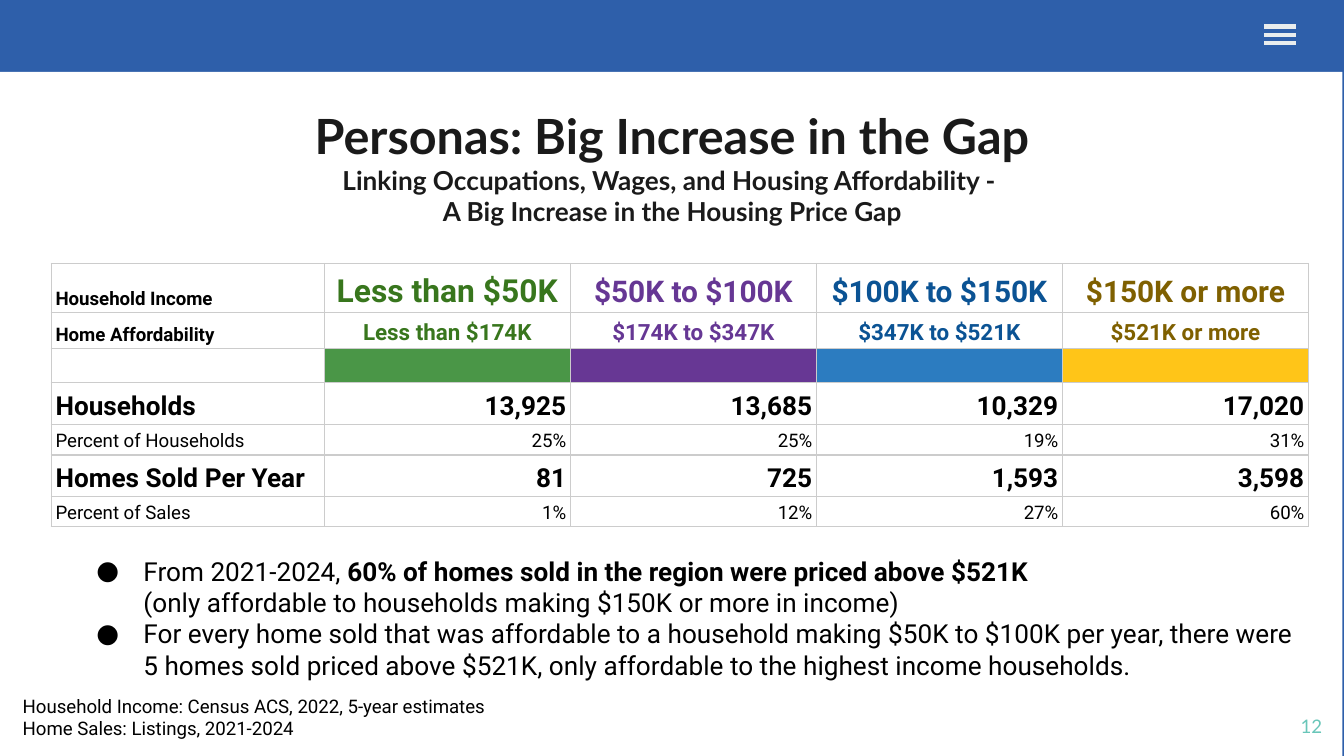
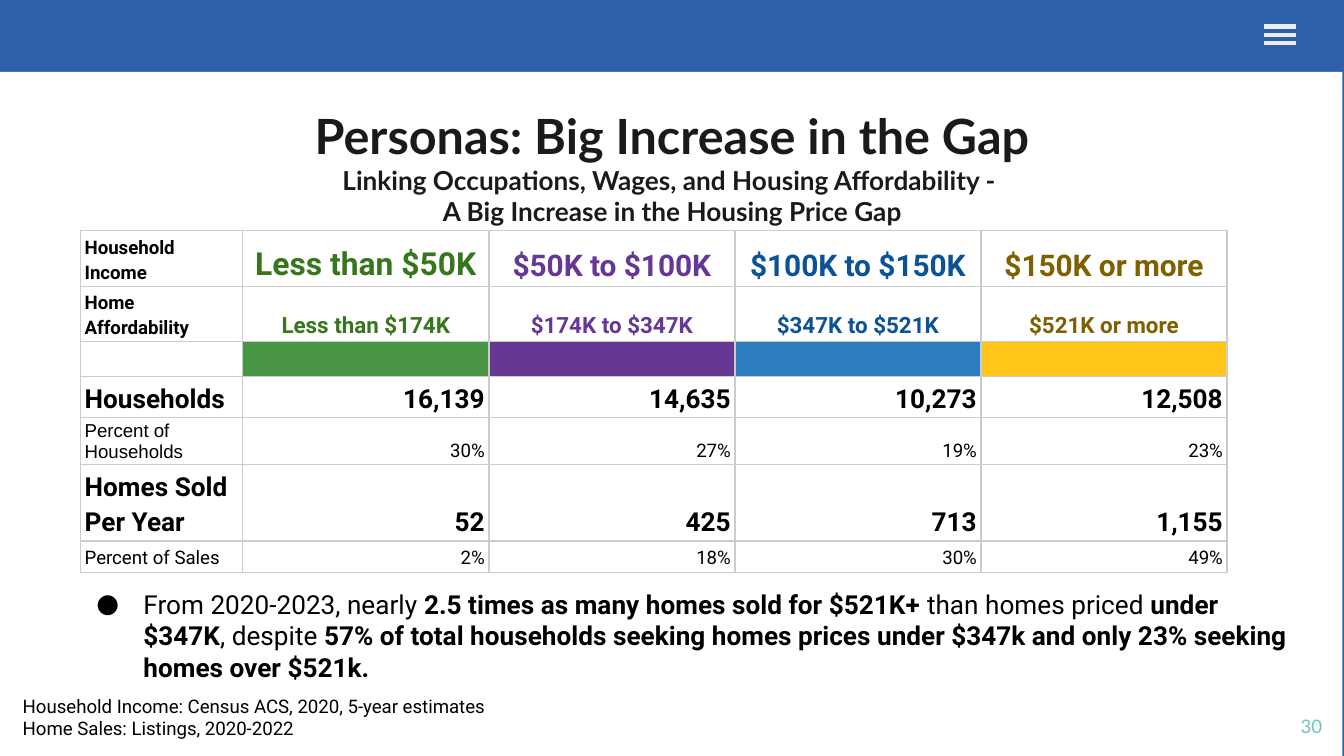
from lxml import etree
from pptx import Presentation
from pptx.dml.color import RGBColor
from pptx.enum.shapes import MSO_CONNECTOR, MSO_SHAPE
from pptx.enum.text import MSO_ANCHOR, MSO_AUTO_SIZE, PP_ALIGN
from pptx.oxml.ns import qn
from pptx.util import Cm, Pt

LEFT, MID, RIGHT = PP_ALIGN.LEFT, PP_ALIGN.CENTER, PP_ALIGN.RIGHT
TOP, CENTRE, BOTTOM = MSO_ANCHOR.TOP, MSO_ANCHOR.MIDDLE, MSO_ANCHOR.BOTTOM
RECT, STRAIGHT, NO_FIT = MSO_SHAPE.RECTANGLE, MSO_CONNECTOR.STRAIGHT, MSO_AUTO_SIZE.NONE

COLORS = {
    "band": "2E5FAA", "page": "FFFFFF", "menu": "E9EDEE", "title": "1A1A1A",
    "text": "000000", "number": "69C6B9", "grid": "CCCCCC",
}
INKS = ["38761D", "663794", "0B5394", "7F6000"]
BARS = ["4A9647", "673794", "2C7CC0", "FFC518"]

# Content: ** marks the start and end of bold text
TITLE = [
    ("Personas: Big Increase in the Gap", 26),
    ("Linking Occupations, Wages, and Housing Affordability - ", 14),
    ("A Big Increase in the Housing Price Gap", 14),
]
INCOME = ["Household Income", "Less than $50K", "$50K to $100K",
          "$100K to $150K", "$150K or more"]
PRICE = ["Home Affordability", "Less than $174K", "$174K to $347K",
         "$347K to $521K", "$521K or more"]
LABELS = ["Households", "Percent of Households", "Homes Sold Per Year",
          "Percent of Sales"]
SLIDES = [
    {
        "number": "12",
        "spot": (0.97, 4.98), "first": 5.16, "font": "Roboto", "space": 1.15,
        "rows": [0.93, 0.66, 0.65, 0.79, 0.58, 0.78, 0.57],
        "data": [
            ["13,925", "13,685", "10,329", "17,020"],
            ["25%", "25%", "19%", "31%"],
            ["81", "725", "1,593", "3,598"],
            ["1%", "12%", "27%", "60%"],
        ],
        "list": (10.24, 2.9),
        "points": [
            "From 2021-2024, **60% of homes sold in the region were priced "
            "above $521K**\n(only affordable to households making $150K or "
            "more in income)",
            "For every home sold that was affordable to a household making "
            "$50K to $100K per year, there were 5 homes sold priced above "
            "$521K, only affordable to the highest income households.",
        ],
        "source": ["Household Income: Census ACS, 2022, 5-year estimates",
                   "Home Sales: Listings, 2021-2024"],
    },
    {
        "number": "30",
        "spot": (1.52, 4.35), "first": 3.07, "font": "Arial", "space": 1.0,
        "rows": [1.06, 1.04, 0.66, 0.78, 0.89, 1.44, 0.59],
        "data": [
            ["16,139", "14,635", "10,273", "12,508"],
            ["30%", "27%", "19%", "23%"],
            ["52", "425", "713", "1,155"],
            ["2%", "18%", "30%", "49%"],
        ],
        "list": (10.87, 2.31),
        "points": [
            "From 2020-2023, nearly **2.5 times as many homes sold for "
            "$521K+ **than homes priced **under $347K**, despite **57% of "
            "total households seeking homes prices under $347k and only 23% "
            "seeking homes over $521k.**",
        ],
        "source": ["Household Income: Census ACS, 2020, 5-year estimates",
                   "Home Sales: Listings, 2020-2022"],
    },
]


def rgb(hue):
    return RGBColor.from_string(COLORS.get(hue, hue))


def style(run, size, hue="text", bold=False, face="Roboto"):
    font = run.font
    font.size, font.bold, font.name = Pt(size), bold, face
    font.color.rgb = rgb(hue)


def place(shape, x, y, w, h):
    shape.left, shape.top, shape.width, shape.height = map(Cm, (x, y, w, h))


def setup(shape, anchor=TOP):
    frame = shape.text_frame
    frame.word_wrap, frame.auto_size = True, NO_FIT
    frame.vertical_anchor = anchor
    frame.margin_left = frame.margin_right = Cm(0.25)
    frame.margin_top = frame.margin_bottom = Cm(0.25)
    return frame


def fill_lines(frame, lines, align, hue, bold, face):
    frame.text = "\n".join(text for text, size in lines)
    for para, (text, size) in zip(frame.paragraphs, lines):
        para.alignment = align
        para.space_before = Pt(0)
        style(para.runs[0], size, hue, bold, face)


def add_text(slide, box, lines, align, hue, face, anchor=TOP):
    shape = slide.shapes.add_textbox(*map(Cm, box))
    fill_lines(setup(shape, anchor), lines, align, hue, False, face)


# Blue band, white page and menu icon
def add_frame(slide):
    back = slide.background.fill
    back.solid()
    back.fore_color.rgb = rgb("band")
    page = slide.shapes.add_shape(RECT, Cm(-0.03), Cm(1.36), Cm(25.4), Cm(12.93))
    page.shadow.inherit = False
    page.fill.solid()
    page.fill.fore_color.rgb = rgb("page")
    page.line.fill.background()
    for i in range(3):
        y = Cm(0.5 + 0.16 * i)
        bar = slide.shapes.add_connector(STRAIGHT, Cm(23.89), y, Cm(24.49), y)
        bar.line.color.rgb = rgb("menu")
        bar.line.width = Pt(2.25)
        etree.SubElement(bar._element.spPr, qn("a:effectLst"))


def add_edges(cell):
    props = cell._tc.get_or_add_tcPr()
    for i, side in enumerate(("lnL", "lnR", "lnT", "lnB")):
        edge = etree.Element(qn("a:" + side), w=str(Pt(0.75)))
        paint = etree.SubElement(edge, qn("a:solidFill"))
        etree.SubElement(paint, qn("a:srgbClr"), val=COLORS["grid"])
        props.insert(i, edge)


# Size, colour, weight and alignment of a cell follow its row and column
def cell_look(row, col):
    if row < 2:
        if col == 0:
            return 10, "text", True, LEFT
        size = 12 if row else 17 if col == 1 else 16
        return size, INKS[col - 1], True, MID
    big = row in (3, 5)
    return 14 if big else 10, "text", big, RIGHT if col else LEFT


def add_grid(slide, item):
    rows = [INCOME, PRICE, [""] * 5]
    rows += [[label] + vals for label, vals in zip(LABELS, item["data"])]
    widths = [item["first"]] + [4.65] * 4
    x, y = item["spot"]
    table = slide.shapes.add_table(
        len(rows), len(widths), Cm(x), Cm(y),
        Cm(sum(widths)), Cm(sum(item["rows"]))).table
    table.first_row = table.horz_banding = False
    for col, width in zip(table.columns, widths):
        col.width = Cm(width)
    for r, vals in enumerate(rows):
        table.rows[r].height = Cm(item["rows"][r])
        for c, text in enumerate(vals):
            cell = table.cell(r, c)
            cell.margin_left = cell.margin_right = Cm(0.08)
            cell.margin_top = cell.margin_bottom = Cm(0.05)
            cell.vertical_anchor = TOP if r == 6 else BOTTOM
            cell.fill.background()
            add_edges(cell)
            para = cell.text_frame.paragraphs[0]
            if not text:
                etree.SubElement(para._p, qn("a:endParaRPr"), sz="1000")
                if c:
                    cell.fill.solid()
                    cell.fill.fore_color.rgb = rgb(BARS[c - 1])
                continue
            odd = (r, c) == (4, 0)
            size, hue, bold, align = cell_look(r, c)
            para.text = text
            para.alignment = align
            para.line_spacing = item["space"] if odd else 1.15
            style(para.runs[0], size, hue, bold, item["font"] if odd else "Roboto")


def add_bullet(para):
    props = para._p.get_or_add_pPr()
    props.set("marL", str(Cm(1.27)))
    props.set("indent", str(Cm(-0.89)))
    tint = etree.SubElement(props, qn("a:buClr"))
    etree.SubElement(tint, qn("a:srgbClr"), val=COLORS["text"])
    etree.SubElement(props, qn("a:buFont"), typeface="Roboto")
    etree.SubElement(props, qn("a:buChar"), char="●")


def add_list(slide, item):
    body = slide.placeholders[1]
    y, h = item["list"]
    place(body, 1.19, y, 23.57, h)
    frame = setup(body)
    for i, point in enumerate(item["points"]):
        para = frame.add_paragraph() if i else frame.paragraphs[0]
        para.alignment, para.space_before = LEFT, Pt(0)
        add_bullet(para)
        for j, part in enumerate(point.split("**")):
            for k, text in enumerate(part.split("\n")):
                if k:
                    para.add_line_break()
                if text:
                    run = para.add_run()
                    run.text = text
                    style(run, 14, bold=j % 2 == 1)


def build(deck, item):
    slide = deck.slides.add_slide(deck.slide_layouts[1])
    add_frame(slide)
    place(slide.shapes.title, 2.03, 1.75, 21.36, 1.5)
    fill_lines(setup(slide.shapes.title), TITLE, MID, "title", True, "Lato")
    add_grid(slide, item)
    add_list(slide, item)
    add_text(slide, (0.18, 12.88, 18.69, 1.37),
             [(text, 10) for text in item["source"]], LEFT, "text", "Roboto")
    add_text(slide, (23.72, 13.18, 1.52, 1.09),
             [(item["number"], 10)], RIGHT, "number", "Lato", CENTRE)
    # Titles and lists sit above the white page
    tree = slide.shapes._spTree
    for shape in list(slide.placeholders):
        tree.append(shape._element)


def main():
    deck = Presentation()
    deck.slide_width, deck.slide_height = Cm(25.4), Cm(14.29)
    for item in SLIDES:
        build(deck, item)
    deck.save("out.pptx")


if __name__ == "__main__":
    main()
